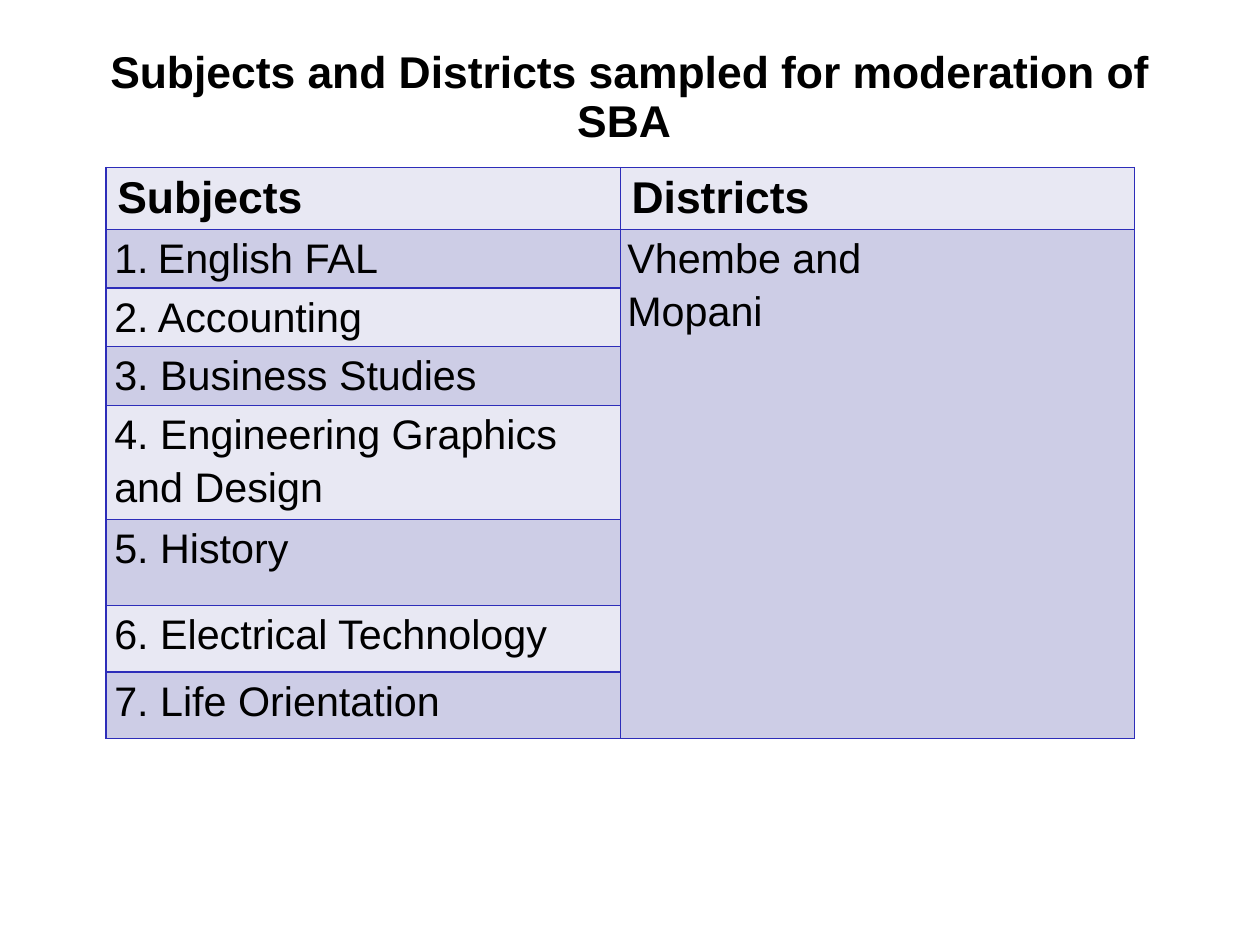
import pptx
import pptx.dml.color
import pptx.enum.text
import pptx.oxml.ns
import pptx.util
from lxml import etree

Pt = pptx.util.Pt
BORDER, LIGHT, DARK = "2D2DB9", "E8E8F3", "CDCDE6"
SUBJECTS = ["English FAL", "2. Accounting", "3. Business Studies",
            "4. Engineering Graphics and Design", "5. History",
            "6. Electrical Technology", "7. Life Orientation"]
ROW_HEIGHTS = [39.2, 36.7, 37, 37, 69.4, 54.4, 41.9, 41.9]


def color(value):
    return pptx.dml.color.RGBColor.from_string(value)


def write(frame, text, size, bold, spacing):
    """Fill a text frame and give all its paragraphs one style."""
    frame.text = text
    for para in frame.paragraphs:
        para.line_spacing = spacing
        for span in para.runs:
            span.font.name = "Arial"
            span.font.size = Pt(size)
            span.font.bold = bold
            span.font.color.rgb = color("000000")


deck = pptx.Presentation()
deck.slide_width, deck.slide_height = Pt(793.7), Pt(595.28)
page = deck.slides.add_slide(deck.slide_layouts[6])

title = page.shapes.add_textbox(Pt(39.7), Pt(25.2), Pt(713.5), Pt(73.4)).text_frame
title.word_wrap = True
title.vertical_anchor = pptx.enum.text.MSO_ANCHOR.MIDDLE
title.margin_left = title.margin_right = title.margin_top = title.margin_bottom = 0
write(title, "Subjects and Districts sampled for moderation of SBA ", 28, True, 0.93)
title.paragraphs[0].alignment = pptx.enum.text.PP_ALIGN.CENTER

table = page.shapes.add_table(len(ROW_HEIGHTS), 2, Pt(66.7), Pt(105.5),
                              Pt(648), Pt(sum(ROW_HEIGHTS))).table
for column in table.columns:
    column.width = Pt(324)
for row, height in zip(table.rows, ROW_HEIGHTS):
    row.height = Pt(height)

for index, row in enumerate(table.rows):
    for cell in row.cells:
        if index:
            cell.margin_left = cell.margin_right = Pt(5.3)
            cell.margin_top = cell.margin_bottom = 0
        else:
            cell.margin_bottom = Pt(1.6)
        properties = cell._tc.get_or_add_tcPr()
        for side in ("a:lnL", "a:lnR", "a:lnT", "a:lnB"):
            line = etree.SubElement(properties, pptx.oxml.ns.qn(side), w=str(Pt(1)))
            fill = etree.SubElement(line, pptx.oxml.ns.qn("a:solidFill"))
            etree.SubElement(fill, pptx.oxml.ns.qn("a:srgbClr"), val=BORDER)
        cell.fill.solid()
        cell.fill.fore_color.rgb = color(DARK if index % 2 else LIGHT)

for column, heading in enumerate(["Subjects", "Districts"]):
    write(table.cell(0, column).text_frame, heading, 28, True, 1.0)
for index, subject in enumerate(SUBJECTS, start=1):
    write(table.cell(index, 0).text_frame, subject, 26, False, 1.15)

numbered = table.cell(1, 0).text_frame.paragraphs[0]._p.get_or_add_pPr()
numbered.set("marL", str(Pt(27.4)))
numbered.set("indent", str(-Pt(27.4)))
etree.SubElement(numbered, pptx.oxml.ns.qn("a:buFont"), typeface="+mj-lt")
etree.SubElement(numbered, pptx.oxml.ns.qn("a:buAutoNum"), type="arabicPeriod")

districts = table.cell(1, 1)
districts.merge(table.cell(len(SUBJECTS), 1))
districts.margin_left = districts.margin_right = Pt(4.5)
write(districts.text_frame, "Vhembe and\nMopani", 26, False, 1.15)

deck.save("out.pptx")
